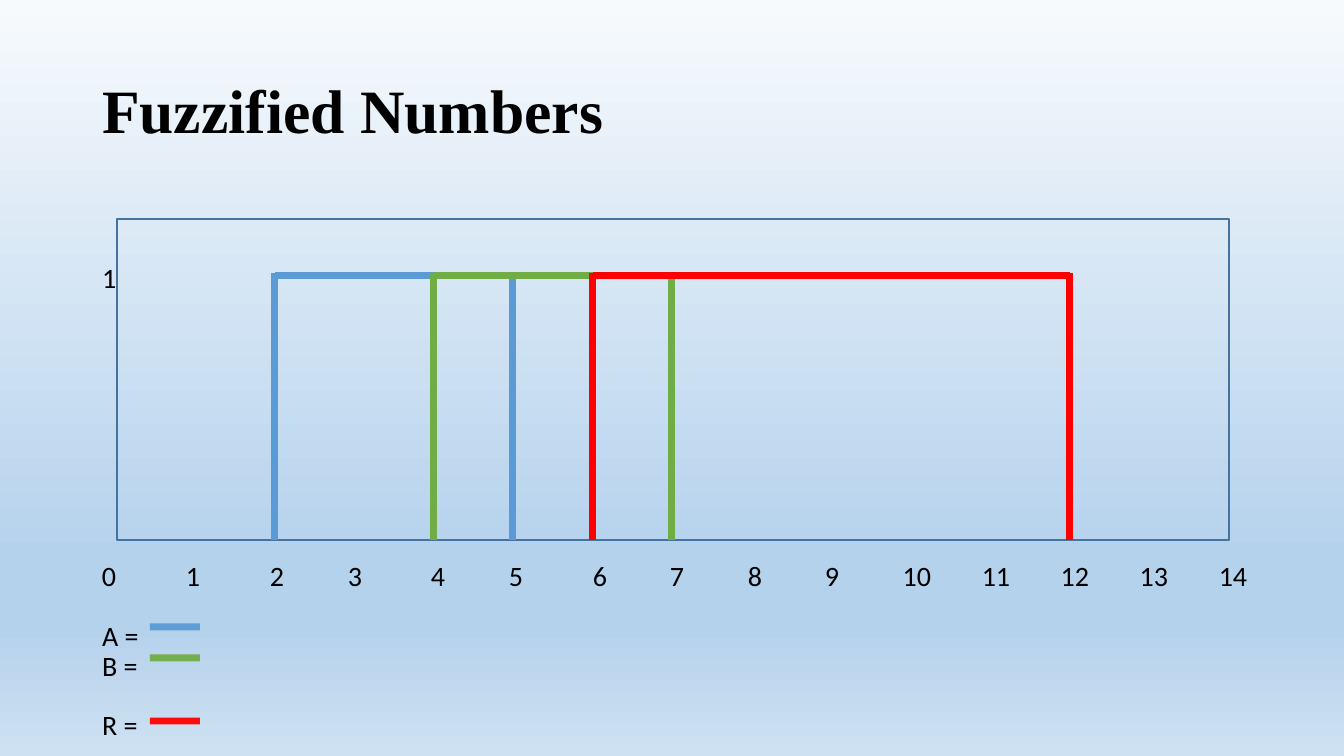
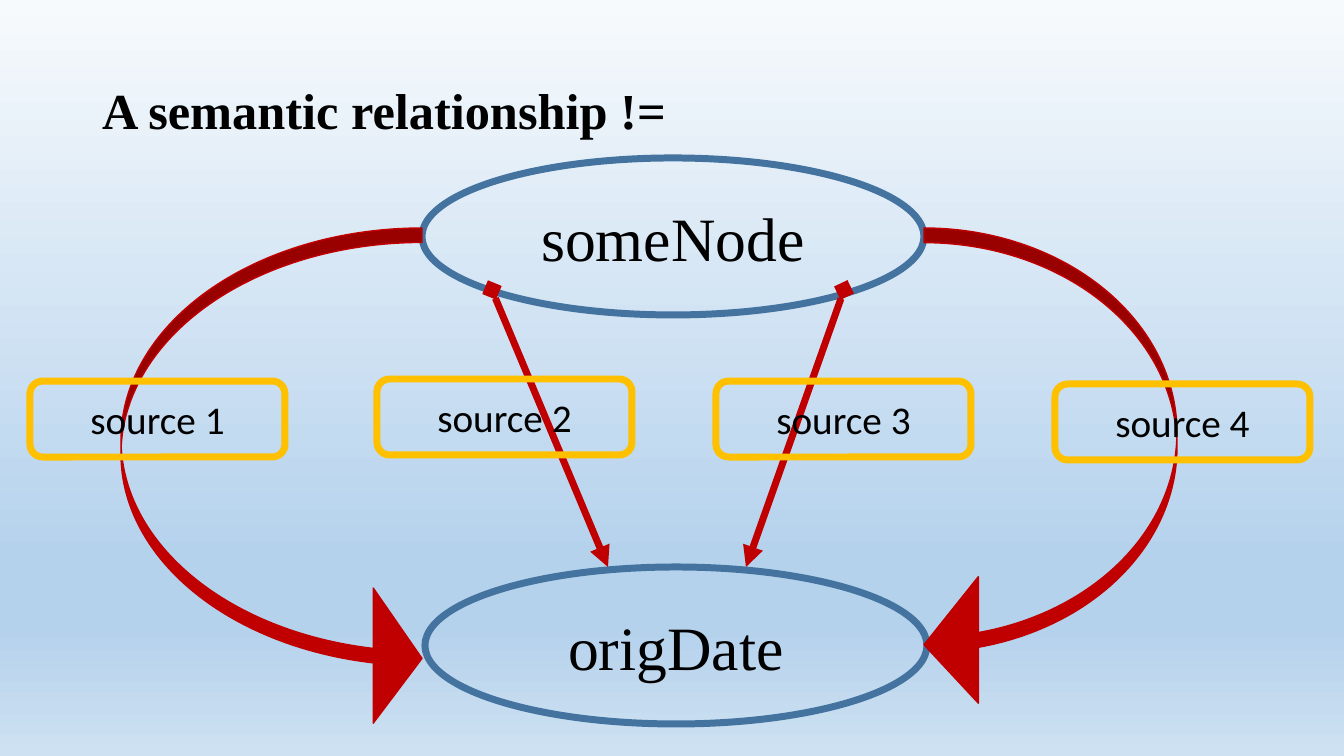
from dataclasses import dataclass

from lxml.etree import SubElement
from pptx import Presentation
from pptx.dml.color import RGBColor
from pptx.enum.shapes import MSO_CONNECTOR, MSO_SHAPE
from pptx.enum.text import MSO_ANCHOR, MSO_AUTO_SIZE, PP_ALIGN
from pptx.oxml.ns import qn
from pptx.util import Emu, Pt

SLIDE_WIDTH, SLIDE_HEIGHT = 1344, 756
EMU_PER_PX = 12192000 / SLIDE_WIDTH


@dataclass(frozen=True)
class Theme:
    black: str = "000000"
    outline: str = "43739E"
    blue: str = "5B9BD5"
    green: str = "70AD47"
    red: str = "FF0000"
    dark_red: str = "C00000"
    gold: str = "FFC000"
    background: tuple = ((0, "F7FAFD"), (74, "B5D2EC"), (83, "B5D2EC"), (100, "CEE1F2"))
    heading_font: str = "Times New Roman"
    body_font: str = "Calibri"
    large_size: int = 44
    title_size: int = 36
    label_size: int = 28
    axis_size: int = 20
    thick: int = 5
    line_spacing: float = 0.9


THEME = Theme()


def px(length):
    return Emu(round(length * EMU_PER_PX))


def place(shape, left, top, width, height):
    shape.left, shape.top = px(left), px(top)
    shape.width, shape.height = px(width), px(height)


def style_runs(paragraph, font_name, size, bold=False):
    for run in paragraph.runs:
        run.font.name = font_name
        run.font.size = Pt(size)
        run.font.bold = bold
        run.font.color.rgb = RGBColor.from_string(THEME.black)


def style_line(line, color, width):
    line.color.rgb = RGBColor.from_string(color)
    line.width = Pt(width)


def set_background(master):
    fill = master.background.fill
    fill.gradient()
    fill.gradient_angle = 270
    stops = master.element.find(".//" + qn("a:gsLst"))
    for stop in list(stops):
        stops.remove(stop)
    for position, color in THEME.background:
        stop = SubElement(stops, qn("a:gs"), pos=str(position * 1000))
        SubElement(stop, qn("a:srgbClr"), val=color)


def add_titled_slide(presentation, layout_name, title, size):
    layout = presentation.slide_layouts.get_by_name(layout_name)
    slide = presentation.slides.add_slide(layout)
    shape = slide.shapes.title
    place(shape, 92, 40, 1159, 147)
    frame = shape.text_frame
    frame.text = title
    frame.auto_size = MSO_AUTO_SIZE.NONE
    frame.vertical_anchor = MSO_ANCHOR.MIDDLE
    paragraph = frame.paragraphs[0]
    paragraph.alignment = PP_ALIGN.LEFT
    paragraph.line_spacing = THEME.line_spacing
    style_runs(paragraph, THEME.heading_font, size, bold=True)
    return slide


def add_outline(slide, kind, box, color, width):
    shape = slide.shapes.add_shape(kind, *map(px, box))
    shape.shadow.inherit = False
    shape.fill.background()
    style_line(shape.line, color, width)
    return shape


def add_label(slide, kind, box, color, text, font_name, size):
    shape = add_outline(slide, kind, box, color, THEME.thick)
    frame = shape.text_frame
    frame.text = text
    frame.vertical_anchor = MSO_ANCHOR.MIDDLE
    paragraph = frame.paragraphs[0]
    paragraph.alignment = PP_ALIGN.CENTER
    style_runs(paragraph, font_name, size)


def add_line(slide, start, end, color, opacity=100, arrow=False):
    connector = slide.shapes.add_connector(
        MSO_CONNECTOR.STRAIGHT, *map(px, (*start, *end)))
    style_line(connector.line, color, THEME.thick)
    properties = connector.element.spPr
    if opacity < 100:
        color_element = properties.find(".//" + qn("a:srgbClr"))
        SubElement(color_element, qn("a:alpha"), val=str(opacity * 1000))
    if arrow:
        line = properties.find(qn("a:ln"))
        SubElement(line, qn("a:headEnd"), type="diamond")
        SubElement(line, qn("a:tailEnd"), type="triangle")
    SubElement(properties, qn("a:effectLst"))


def add_curved_arrow(slide, kind, box, adjustments):
    shape = add_outline(slide, kind, box, THEME.dark_red, 1)
    shape.fill.solid()
    shape.fill.fore_color.rgb = RGBColor.from_string(THEME.dark_red)
    for index, value in enumerate(adjustments):
        shape.adjustments[index] = value


def format_plain_paragraph(paragraph, space_before):
    properties = paragraph._p.get_or_add_pPr()
    properties.set("marL", "0")
    properties.set("indent", "0")
    SubElement(properties, qn("a:buNone"))
    paragraph.line_spacing = THEME.line_spacing
    paragraph.space_before = Pt(space_before)
    style_runs(paragraph, THEME.body_font, THEME.axis_size)


def fill_axis_body(body):
    place(body, 92, 259, 1183, 484)
    rows = (("1", 0), ("A =", 234), ("B =", 0), ("R =", 21))
    frame = body.text_frame
    frame.auto_size = MSO_AUTO_SIZE.NONE
    frame.vertical_anchor = MSO_ANCHOR.TOP
    frame.text = "\n".join(text for text, _ in rows)
    for paragraph, (_, space_before) in zip(frame.paragraphs, rows):
        format_plain_paragraph(paragraph, space_before)


def add_tick(slide, value, center):
    width, height = 60, 34
    box = slide.shapes.add_textbox(
        *map(px, (center - width // 2, 558, width, height)))
    frame = box.text_frame
    frame.margin_left = frame.margin_right = 0
    frame.margin_top = frame.margin_bottom = 0
    frame.word_wrap = True
    frame.text = str(value)
    paragraph = frame.paragraphs[0]
    paragraph.alignment = PP_ALIGN.CENTER
    style_runs(paragraph, THEME.body_font, THEME.axis_size)


def axis_x(value):
    return 116 + value * 159 // 2


def add_interval(slide, low, high, color):
    left, right, top, bottom = axis_x(low), axis_x(high), 276, 540
    add_line(slide, (left, top), (right, top), color)
    for x in (left, right):
        add_line(slide, (x, top - 3), (x, bottom), color)


def build_fuzzified_numbers(presentation):
    slide = add_titled_slide(
        presentation, "Title and Content", "Fuzzified Numbers", THEME.large_size)
    fill_axis_body(slide.placeholders[1])
    tick_centers = (109, 193, 277, 355, 438, 516, 600, 677,
                    755, 832, 917, 996, 1075, 1154, 1233)
    for value, center in enumerate(tick_centers):
        add_tick(slide, value, center)
    add_outline(slide, MSO_SHAPE.RECTANGLE, (117, 219, 1112, 321), THEME.outline, 2)
    intervals = ((2, 5, THEME.blue, 627), (4, 7, THEME.green, 658), (6, 12, THEME.red, 721))
    for low, high, color, legend_y in intervals:
        add_interval(slide, low, high, color)
        add_line(slide, (150, legend_y), (200, legend_y), color, opacity=95)


def build_semantic_relationship(presentation):
    slide = add_titled_slide(
        presentation, "Title Only", "A semantic relationship !=", THEME.title_size)
    for text, left, top in (("someNode", 422, 158), ("origDate", 425, 567)):
        add_label(slide, MSO_SHAPE.OVAL, (left, top, 502, 157), THEME.outline,
                  text, THEME.heading_font, THEME.large_size)
    for start_x, end_x in ((492, 608), (844, 746)):
        add_line(slide, (start_x, 290), (end_x, 567), THEME.dark_red, arrow=True)
    add_curved_arrow(slide, MSO_SHAPE.CURVED_LEFT_ARROW,
                     (924, 228, 253, 480), (0.058, 0.5, 0.215))
    add_curved_arrow(slide, MSO_SHAPE.CURVED_RIGHT_ARROW,
                     (121, 228, 301, 498), (0.048, 0.449, 0.162))
    source_corners = ((30, 381), (377, 379), (716, 381), (1055, 384))
    for number, (left, top) in enumerate(source_corners, start=1):
        add_label(slide, MSO_SHAPE.ROUNDED_RECTANGLE, (left, top, 255, 76), THEME.gold,
                  f"source {number}", THEME.body_font, THEME.label_size)


def main():
    presentation = Presentation()
    presentation.slide_width = px(SLIDE_WIDTH)
    presentation.slide_height = px(SLIDE_HEIGHT)
    set_background(presentation.slide_master)
    build_fuzzified_numbers(presentation)
    build_semantic_relationship(presentation)
    presentation.save("out.pptx")


if __name__ == "__main__":
    main()
